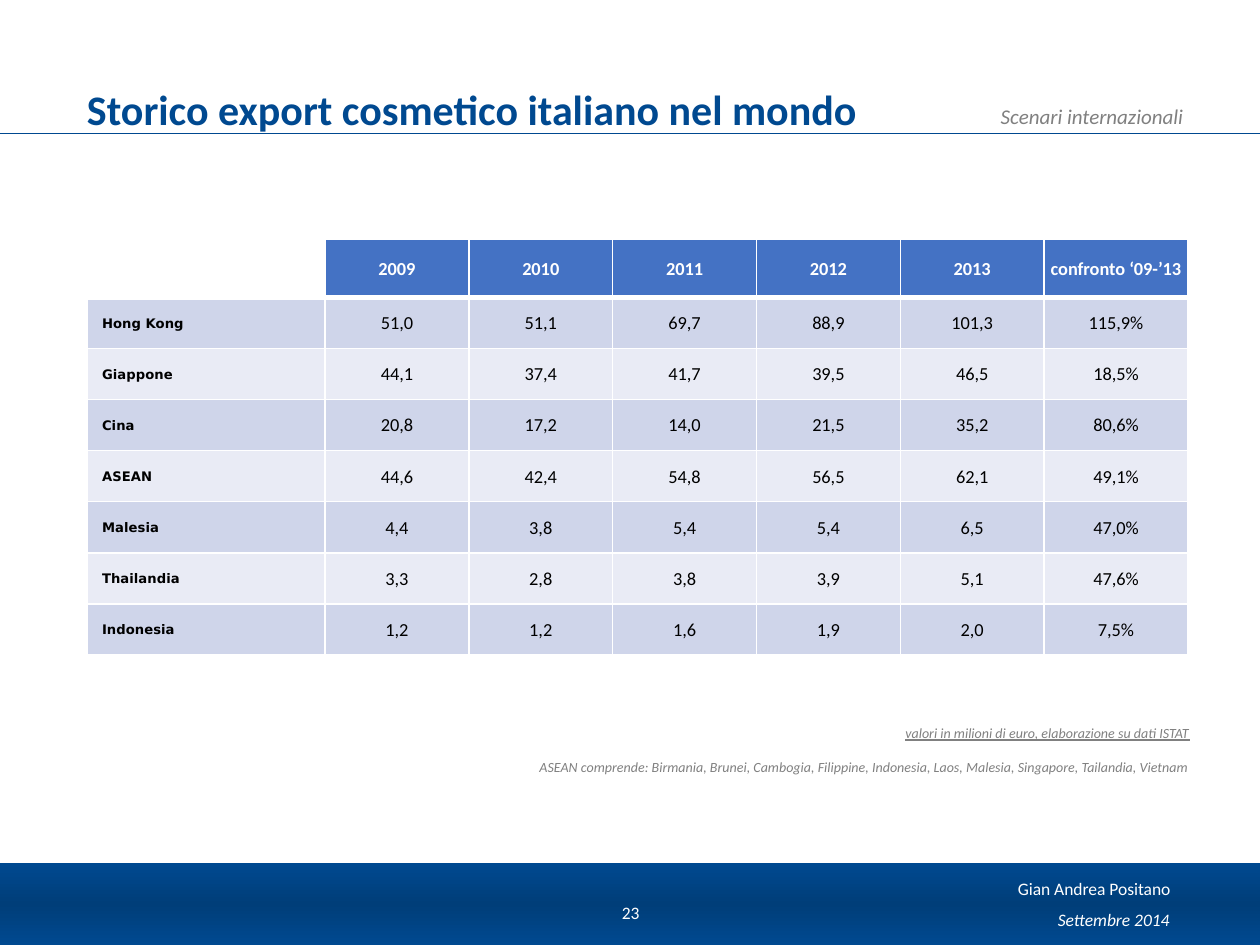
from copy import deepcopy
from dataclasses import dataclass

from lxml import etree
from pptx import Presentation
from pptx import util as u
from pptx.dml import color
from pptx.enum import shapes, text
from pptx.oxml import ns


@dataclass(frozen=True)
class Theme:
    navy: str = "004990"
    deep_navy: str = "003E79"
    header: str = "4472C4"
    bands: tuple = ("CFD5EA", "E9EBF5")
    white: str = "FFFFFF"
    black: str = "000000"
    grey: str = "808080"
    body_font: str = "Calibri"
    label_font: str = "DejaVu Sans"
    title_size: float = 24
    section_size: float = 12
    footer_size: float = 10
    value_size: float = 10.5
    label_size: float = 7.5
    note_size: float = 8


THEME = Theme()
LEFT, CENTER, RIGHT = text.PP_ALIGN.LEFT, text.PP_ALIGN.CENTER, text.PP_ALIGN.RIGHT
TOP, MIDDLE = text.MSO_ANCHOR.TOP, text.MSO_ANCHOR.MIDDLE

HEADINGS = ["", "2009", "2010", "2011", "2012", "2013", "confronto ‘09-’13"]
EXPORTS = [
    ["Hong Kong", "51,0", "51,1", "69,7", "88,9", "101,3", "115,9%"],
    ["Giappone", "44,1", "37,4", "41,7", "39,5", "46,5", "18,5%"],
    ["Cina", "20,8", "17,2", "14,0", "21,5", "35,2", "80,6%"],
    ["ASEAN", "44,6", "42,4", "54,8", "56,5", "62,1", "49,1%"],
    ["Malesia", "4,4", "3,8", "5,4", "5,4", "6,5", "47,0%"],
    ["Thailandia", "3,3", "2,8", "3,8", "3,9", "5,1", "47,6%"],
    ["Indonesia", "1,2", "1,2", "1,6", "1,9", "2,0", "7,5%"],
]
NOTES = [
    "valori in milioni di euro, elaborazione su dati ISTAT",
    "ASEAN comprende: Birmania, Brunei, Cambogia, Filippine, Indonesia, "
    "Laos, Malesia, Singapore, Tailandia, Vietnam",
]


def rgb(value):
    return color.RGBColor.from_string(value)


def inches(box):
    return [u.Inches(length) for length in box]


def style(para, size, ink, align=LEFT, font=THEME.body_font, bold=False, italic=False):
    para.alignment = align
    for span in para.runs:
        span.font.name = font
        span.font.size = u.Pt(size)
        span.font.bold = bold
        span.font.italic = italic
        span.font.color.rgb = rgb(ink)


def add_text(page, box, lines, size, ink, align=LEFT, anchor=TOP, italic=False):
    frame = page.shapes.add_textbox(*inches(box)).text_frame
    frame.word_wrap = True
    frame.vertical_anchor = anchor
    frame.text = "\n".join(lines)
    for para in frame.paragraphs:
        style(para, size, ink, align, italic=italic)
    return frame


def add_footer(page, box):
    left, top, width, height = box
    band = page.shapes.add_shape(shapes.MSO_SHAPE.RECTANGLE, *inches(box))
    band.shadow.inherit = False
    band.line.fill.background()
    band.fill.gradient()
    band.fill.gradient_angle = 90
    stops = band.fill.gradient_stops
    for stop, position, shade in zip(stops, (0, 0.5), (THEME.navy, THEME.deep_navy)):
        stop.position = position
        stop.color.rgb = rgb(shade)
    stop_list = band.fill._fill._gradFill.gsLst
    last = deepcopy(stop_list[0])
    last.set("pos", "100000")
    stop_list.append(last)

    size, ink = THEME.footer_size, THEME.white
    add_text(page, (left + 8.05, top + 0.34, 1.52, 0.21), ["Settembre 2014"],
             size, ink, RIGHT, MIDDLE, italic=True)
    author = add_text(page, (left + 8.17, top + 0.09, 1.53, 0.31),
                      ["Gian Andrea Positano"], size, ink)
    author.paragraphs[0].line_spacing = 0.9
    add_text(page, (left + 4.91, top + 0.19, 0.57, 0.4), ["23"], size, ink, CENTER, MIDDLE)


def add_header(page, box):
    left, top, width, height = box
    bottom = top + height
    rule = page.shapes.add_connector(
        shapes.MSO_CONNECTOR.STRAIGHT, *inches((left, bottom, left + width, bottom)))
    rule.line.color.rgb = rgb(THEME.navy)
    rule.line.width = u.Pt(0.75)
    etree.SubElement(rule._element.spPr, ns.qn("a:effectLst"))
    add_text(page, (left + 6.26, top + 0.11, 3.4, 0.3), ["Scenari internazionali"],
             THEME.section_size, THEME.grey, RIGHT, italic=True)

    title = page.shapes.title
    title.left, title.top, title.width, title.height = inches((left + 0.76, top, 7.99, 0.5))
    frame = title.text_frame
    frame.text = "Storico export cosmetico italiano nel mondo"
    frame.auto_size = text.MSO_AUTO_SIZE.NONE
    frame.vertical_anchor = TOP
    frame.paragraphs[0].line_spacing = 0.9
    style(frame.paragraphs[0], THEME.title_size, THEME.navy, bold=True)


def set_borders(cell, bottom_width):
    properties = cell._tc.get_or_add_tcPr()
    for place, (side, width) in enumerate(
            [("L", 1), ("R", 1), ("T", 1), ("B", bottom_width)]):
        line = etree.Element(ns.qn(f"a:ln{side}"), w=str(u.Pt(width)))
        fill = etree.SubElement(line, ns.qn("a:solidFill"))
        etree.SubElement(fill, ns.qn("a:srgbClr"), val=THEME.white)
        properties.insert(place, line)


def format_cell(cell, row, column):
    is_header, is_label = row == 0, column == 0
    cell.vertical_anchor = MIDDLE
    cell.margin_left = u.Inches(0.12 if is_label else 0.01)
    cell.margin_top = cell.margin_right = u.Inches(0.01)
    cell.margin_bottom = 0
    if is_header and is_label:
        cell.fill.background()
    else:
        cell.fill.solid()
        shade = THEME.header if is_header else THEME.bands[(row - 1) % 2]
        cell.fill.fore_color.rgb = rgb(shade)
    set_borders(cell, 3 if is_header else 1)
    para = cell.text_frame.paragraphs[0]
    if is_label:
        style(para, THEME.label_size, THEME.black, font=THEME.label_font, bold=True)
    else:
        ink = THEME.white if is_header else THEME.black
        style(para, THEME.value_size, ink, CENTER, bold=is_header)


def add_export_table(page, box, label_width=1.89, header_height=0.46):
    left, top, width, height = box
    rows = [HEADINGS, *EXPORTS]
    table = page.shapes.add_table(len(rows), len(HEADINGS), *inches(box)).table
    value_width = (width - label_width) / (len(HEADINGS) - 1)
    row_height = (height - header_height) / len(EXPORTS)
    for index, column in enumerate(table.columns):
        column.width = u.Inches(value_width if index else label_width)
    for index, row in enumerate(table.rows):
        row.height = u.Inches(row_height if index else header_height)
    for row, values in enumerate(rows):
        for column, value in enumerate(values):
            cell = table.cell(row, column)
            cell.text = value
            format_cell(cell, row, column)


def add_notes(page, box):
    frame = add_text(page, box, NOTES, THEME.note_size, THEME.grey, RIGHT, italic=True)
    source, members = frame.paragraphs
    source.runs[0].font.underline = True
    members.space_before = u.Pt(9.75)


def main():
    deck = Presentation()
    deck.slide_width, deck.slide_height = inches((10, 7.5))
    page = deck.slides.add_slide(deck.slide_layouts[5])
    add_footer(page, (-0.19, 6.85, 10.3, 0.65))
    add_header(page, (-0.17, 0.66, 10.24, 0.4))
    add_notes(page, (3.04, 5.7, 6.5, 0.5))
    add_export_table(page, (0.69, 1.9, 8.74, 3.3))
    deck.save("out.pptx")


if __name__ == "__main__":
    main()
